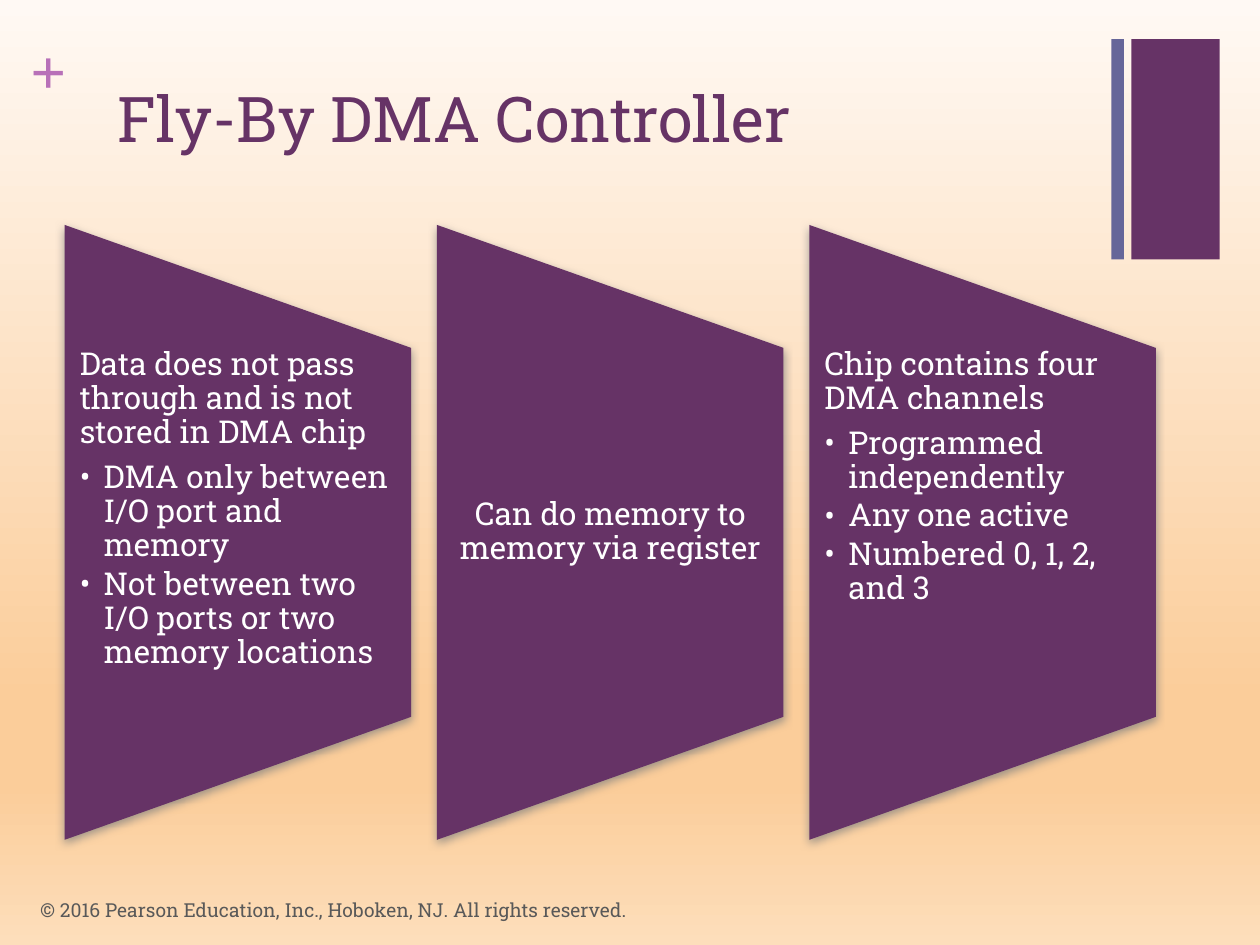
from dataclasses import dataclass

from pptx import Presentation
from pptx.dml.color import RGBColor
from pptx.enum.shapes import MSO_SHAPE
from pptx.enum.text import MSO_ANCHOR, PP_ALIGN
from pptx.oxml import parse_xml
from pptx.oxml.ns import nsdecls, qn
from pptx.oxml.xmlchemy import OxmlElement
from pptx.slide import Slide
from pptx.util import Inches, Pt

PLUM = RGBColor(0x66, 0x33, 0x66)
SLATE = RGBColor(0x66, 0x66, 0x99)
ORCHID = RGBColor(0xB8, 0x70, 0xB8)
WHITE = RGBColor(0xFF, 0xFF, 0xFF)
GRAY = RGBColor(0x59, 0x59, 0x59)
SHADE = RGBColor(0x80, 0x80, 0x80)
SKY = [
    (0, RGBColor(0xFF, 0xF9, 0xF4)),
    (74, RGBColor(0xFB, 0xCD, 0x9A)),
    (83, RGBColor(0xFB, 0xCD, 0x9A)),
    (100, RGBColor(0xFD, 0xDE, 0xBB)),
]
FONT = "Roboto Slab"
COLS, ROWS = 100, 75
CELL = Inches(0.1)


@dataclass(frozen=True)
class Box:
    """An area in grid columns and rows."""
    left: float
    top: float
    width: float
    height: float

    def emu(self) -> list[int]:
        return [round(n * CELL) for n in (self.left, self.top, self.width, self.height)]

    def turned(self) -> "Box":
        """The box that covers this area once rotated by a quarter turn."""
        shift = (self.width - self.height) / 2
        return Box(self.left + shift, self.top - shift, self.height, self.width)


@dataclass(frozen=True)
class Panel:
    head: str
    points: tuple[str, ...] = ()


PANELS = [
    Panel("Data does not pass through and is not stored in DMA chip",
          ("DMA only between I/O port and memory",
           "Not between two I/O ports or two memory locations")),
    Panel("Can do memory to memory via register"),
    Panel("Chip contains four DMA channels",
          ("Programmed independently", "Any one active", "Numbered 0, 1, 2, and 3")),
]
FIRST = Box(5.13, 17.85, 27.5, 48.8)
STEP = 29.55


def style(para, size: float, color: RGBColor, face: str = FONT, bold: bool = False) -> None:
    for run in para.runs:
        font = run.font
        font.size, font.name, font.bold = Pt(size), face, bold
        font.color.rgb = color


def add_text(slide: Slide, box: Box, inset: float, anchor: MSO_ANCHOR):
    frame = slide.shapes.add_textbox(*box.emu()).text_frame
    frame.word_wrap = True
    frame.vertical_anchor = anchor
    frame.margin_left = frame.margin_right = Inches(inset)
    frame.margin_top = frame.margin_bottom = 0
    return frame


def add_block(slide: Slide, kind: MSO_SHAPE, box: Box, color: RGBColor):
    shape = slide.shapes.add_shape(kind, *box.emu())
    shape.fill.solid()
    shape.fill.fore_color.rgb = color
    shape.line.fill.background()
    shape.shadow.inherit = False
    return shape


def add_bullet(para) -> None:
    props = para._p.get_or_add_pPr()
    props.set("marL", str(Inches(0.19)))
    props.set("indent", str(-Inches(0.19)))
    for tag, key, value in (("a:buFont", "typeface", FONT), ("a:buChar", "char", "•")):
        mark = OxmlElement(tag)
        mark.set(key, value)
        props.append(mark)


def cast_shade(shape) -> None:
    effects = shape.element.spPr.find(qn("a:effectLst"))
    effects.append(parse_xml(
        f'<a:outerShdw {nsdecls("a")} blurRad="{Pt(5)}" dist="{Pt(2)}" dir="5400000"'
        f' rotWithShape="0"><a:srgbClr val="{SHADE}"><a:alpha val="75000"/>'
        '</a:srgbClr></a:outerShdw>'))


def add_panel(slide: Slide, panel: Panel, box: Box) -> None:
    shape = add_block(slide, MSO_SHAPE.FLOWCHART_MANUAL_OPERATION, box.turned(), PLUM)
    shape.rotation = 270
    cast_shade(shape)

    inner = Box(box.left, box.top + box.height / 5, box.width, box.height * 0.6)
    anchor = MSO_ANCHOR.TOP if panel.points else MSO_ANCHOR.MIDDLE
    frame = add_text(slide, inner, 0.12, anchor)
    for i, text in enumerate((panel.head, *panel.points)):
        para = frame.add_paragraph() if i else frame.paragraphs[0]
        para.text = text
        if i:
            para.level = 1
            add_bullet(para)
        para.alignment = PP_ALIGN.LEFT if panel.points else PP_ALIGN.CENTER
        para.line_spacing = 0.9
        para.space_after = Pt(2.7 if i else 6.3)
        style(para, 18, WHITE)


def paint_back(slide: Slide) -> None:
    stops = "".join(f'<a:gs pos="{pos * 1000}"><a:srgbClr val="{color}"/></a:gs>'
                    for pos, color in SKY)
    slide.element.cSld.insert(0, parse_xml(
        f'<p:bg {nsdecls("p", "a")}><p:bgPr><a:gradFill><a:gsLst>{stops}</a:gsLst>'
        '<a:lin ang="5400000" scaled="0"/></a:gradFill><a:effectLst/></p:bgPr></p:bg>'))


def set_title(slide: Slide, text: str, box: Box) -> None:
    title = slide.shapes.title
    title.left, title.top, title.width, title.height = box.emu()
    frame = title.text_frame
    frame.text = text
    frame.vertical_anchor = MSO_ANCHOR.TOP
    frame.paragraphs[0].alignment = PP_ALIGN.LEFT
    style(frame.paragraphs[0], 36, PLUM)


def main() -> None:
    deck = Presentation()
    deck.slide_width, deck.slide_height = COLS * CELL, ROWS * CELL
    slide = deck.slides.add_slide(deck.slide_layouts[5])
    paint_back(slide)
    set_title(slide, "Fly-By DMA Controller", Box(8.3, 5.8, 82.6, 12.2))

    add_block(slide, MSO_SHAPE.RECTANGLE, Box(89.8, 3.1, 7, 17.5), PLUM)
    add_block(slide, MSO_SHAPE.RECTANGLE, Box(88.2, 3.1, 1, 17.5), SLATE)
    plus = add_text(slide, Box(2.4, 2.5, 2.9, 6.1), 0, MSO_ANCHOR.TOP)
    plus.text = "+"
    style(plus.paragraphs[0], 36, ORCHID, "Times New Roman", True)

    for i, panel in enumerate(PANELS):
        box = Box(FIRST.left + i * STEP, FIRST.top, FIRST.width, FIRST.height)
        add_panel(slide, panel, box)

    foot = add_text(slide, Box(2.2, 70.2, 67, 4), 0.1, MSO_ANCHOR.MIDDLE)
    foot.text = "© 2016 Pearson Education, Inc., Hoboken, NJ. All rights reserved."
    style(foot.paragraphs[0], 11, GRAY)
    deck.save("out.pptx")


if __name__ == "__main__":
    main()
